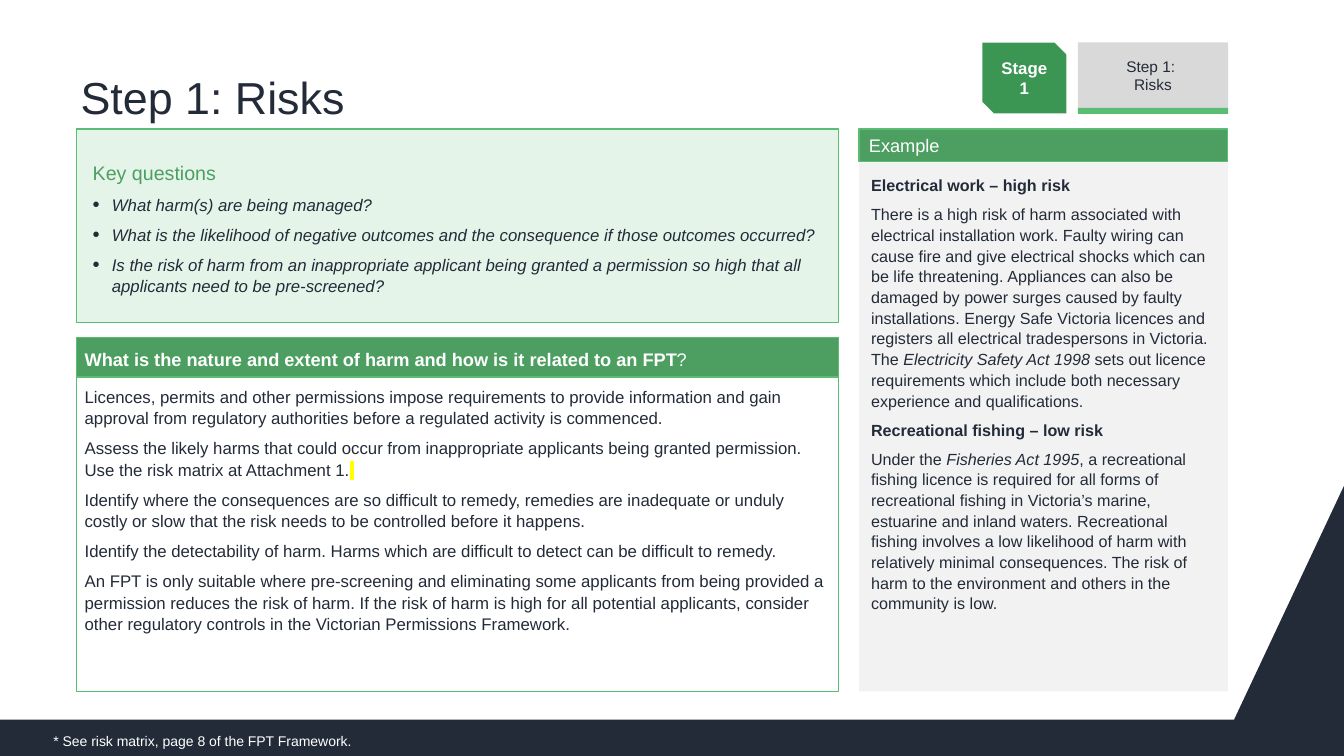
from lxml.etree import SubElement
from pptx import Presentation
from pptx.dml.color import RGBColor as Color
from pptx.enum.shapes import MSO_SHAPE as Shape
from pptx.enum.text import MSO_ANCHOR as Anchor, PP_ALIGN as Align
from pptx.oxml.ns import qn
from pptx.util import Inches, Pt

COLORS = {
    "navy": "232B39", "white": "FFFFFF", "green": "4C9E61",
    "bright": "5BBD74", "stage": "3C9653", "mint": "E5F4E9",
    "pale": "F2F2F2", "gray": "D9D9D9", "yellow": "FFFF00",
}
LEFT, WIDTH = 0.76, 7.56
SIDE, SIDE_WIDTH = 8.52, 3.66
TOP, BOTTOM = 1.28, 6.86
STEP, STEP_WIDTH = 10.69, 1.49

QUESTIONS = [
    "What harm(s) are being managed?",
    "What is the likelihood of negative outcomes and the consequence if those outcomes occurred?",
    "Is the risk of harm from an inappropriate applicant being granted a permission so high that all "
    "applicants need to be pre-screened?",
]
HARM = [
    "Licences, permits and other permissions impose requirements to provide information and gain "
    "approval from regulatory authorities before a regulated activity is commenced.",
    [("Assess the likely harms that could occur from inappropriate applicants being granted permission. "
      "Use the risk matrix at Attachment 1.", ""), (" ", "highlight")],
    "Identify where the consequences are so difficult to remedy, remedies are inadequate or unduly "
    "costly or slow that the risk needs to be controlled before it happens.",
    "Identify the detectability of harm. Harms which are difficult to detect can be difficult to remedy.",
    "An FPT is only suitable where pre-screening and eliminating some applicants from being provided a "
    "permission reduces the risk of harm. If the risk of harm is high for all potential applicants, "
    "consider other regulatory controls in the Victorian Permissions Framework.",
]
EXAMPLES = [
    [("Electrical work – high risk", "bold")],
    [("There is a high risk of harm associated with electrical installation work. Faulty wiring can "
      "cause fire and give electrical shocks which can be life threatening. Appliances can also be "
      "damaged by power surges caused by faulty installations. Energy Safe Victoria licences and "
      "registers all electrical tradespersons in Victoria. The ", ""),
     ("Electricity Safety Act 1998", "italic"),
     (" sets out licence requirements which include both necessary experience and qualifications.", "")],
    [("Recreational fishing – low risk", "bold")],
    [("Under the ", ""), ("Fisheries Act 1995", "italic"),
     (", a recreational fishing licence is required for all forms of recreational fishing in "
      "Victoria’s marine, estuarine and inland waters. Recreational fishing involves a low likelihood "
      "of harm with relatively minimal consequences. The risk of harm to the environment and others "
      "in the community is low.", "")],
]


class SlideBuilder:
    font = "Arial"

    def __init__(self, page):
        self.page = page

    def paint(self, shape, fill, line=None, weight=1):
        shape.shadow.inherit = False
        shape.fill.solid()
        shape.fill.fore_color.rgb = Color.from_string(COLORS[fill])
        if line:
            shape.line.color.rgb = Color.from_string(COLORS[line])
            shape.line.width = Pt(weight)
        else:
            shape.line.fill.background()
        return shape

    def box(self, place, fill, line=None, weight=1, kind=Shape.RECTANGLE):
        shape = self.page.shapes.add_shape(kind, *map(Inches, place))
        return self.paint(shape, fill, line, weight)

    def outline(self, points, fill):
        start, *rest = [(Inches(x), Inches(y)) for x, y in points]
        builder = self.page.shapes.build_freeform(*start)
        builder.add_line_segments(rest, close=True)
        return self.paint(builder.convert_to_shape(), fill)

    def text_box(self, place):
        return self.page.shapes.add_textbox(*map(Inches, place))

    def frame(self, shape, anchor=Anchor.TOP, insets=(0.1, 0.05, 0.1, 0.05)):
        frame = shape.text_frame
        frame.word_wrap = True
        frame.vertical_anchor = anchor
        (frame.margin_left, frame.margin_top,
         frame.margin_right, frame.margin_bottom) = map(Inches, insets)
        return frame

    def bullet(self, para):
        props = para._p.get_or_add_pPr()
        props.set("marL", str(Inches(0.19)))
        props.set("indent", str(-Inches(0.19)))
        SubElement(props, qn("a:buSzPct"), val="120000")
        SubElement(props, qn("a:buFont"), typeface=self.font)
        SubElement(props, qn("a:buChar"), char="•")

    def span(self, para, text, style):
        span = para.add_run()
        span.text = text
        if style == "bold":
            span.font.bold = True
        elif style == "italic":
            span.font.italic = True
        elif style == "highlight":
            mark = SubElement(span._r.get_or_add_rPr(), qn("a:highlight"))
            SubElement(mark, qn("a:srgbClr"), val=COLORS["yellow"])

    def paragraph(self, frame, content, size, color="navy", align=Align.LEFT,
                  spacing=None, after=0, italic=None, bullet=False):
        first = frame.paragraphs[0]
        para = frame.add_paragraph() if first.text else first
        if bullet:
            self.bullet(para)
        if isinstance(content, str):
            para.text = content
        else:
            for text, style in content:
                self.span(para, text, style)
        para.alignment = align
        para.line_spacing = spacing
        para.space_after = Pt(after)
        para.font.name = self.font
        para.font.size = Pt(size)
        para.font.italic = italic
        para.font.color.rgb = Color.from_string(COLORS[color])

    def body(self, frame, contents, size, **style):
        for content in contents:
            self.paragraph(frame, content, size, spacing=1.07, after=6, **style)


def main():
    deck = Presentation()
    deck.slide_width, deck.slide_height = Inches(13.33), Inches(7.5)
    slide = SlideBuilder(deck.slides.add_slide(deck.slide_layouts[6]))

    slide.outline([(12.24, 7.14), (0, 7.14), (0, 7.5), (13.33, 7.5), (13.33, 4.82)], "navy")

    examples = slide.box((SIDE, 1.61, SIDE_WIDTH, BOTTOM - 1.61), "pale")
    slide.body(slide.frame(examples, insets=(0.12,) * 4), EXAMPLES, 11.5)

    harm_header = slide.box((LEFT, 3.35, WIDTH, 0.42), "green", "bright")
    slide.paragraph(slide.frame(harm_header, Anchor.MIDDLE, (0.08, 0.08, 0.08, 0.04)),
                    [("What is the nature and extent of harm and how is it related to an FPT", "bold"),
                     ("?", "")], 13, "white", spacing=0.9)

    example_header = slide.box((SIDE, TOP, SIDE_WIDTH, 0.32), "green", "bright", 0.75)
    slide.paragraph(slide.frame(example_header, Anchor.MIDDLE), "Example", 13, "white")

    harm = slide.box((LEFT, 3.74, WIDTH, BOTTOM - 3.74), "white", "bright")
    slide.body(slide.frame(harm, insets=(0.08,) * 4), HARM, 12)

    footnote = slide.text_box((0.43, 7.22, 5.39, 0.27))
    slide.paragraph(slide.frame(footnote), "* See risk matrix, page 8 of the FPT Framework.", 10, "white")

    stage = slide.box((9.73, 0.41, 0.86, 0.73), "stage", "white", 2, Shape.SNIP_2_DIAG_RECTANGLE)
    slide.paragraph(slide.frame(stage, Anchor.MIDDLE), [("Stage 1", "bold")], 12, "white", Align.CENTER)

    step = slide.box((STEP, 0.42, STEP_WIDTH, 0.65), "gray")
    slide.paragraph(slide.frame(step, Anchor.MIDDLE), "Step 1: \vRisks", 11, align=Align.CENTER)
    slide.box((STEP, 1.07, STEP_WIDTH, 0.06), "bright")

    key_box = slide.box((LEFT, TOP, WIDTH, 1.92), "mint", "bright")
    key_frame = slide.frame(key_box, Anchor.MIDDLE, (0.16, 0.12, 0.16, 0.08))
    slide.body(key_frame, ["Key questions"], 14, color="green")
    slide.body(key_frame, QUESTIONS, 12, italic=True, bullet=True)

    title = slide.text_box((LEFT, 0.15, 11.43, 1.13))
    slide.paragraph(slide.frame(title, Anchor.BOTTOM, (0.04, 0.05, 0.04, 0.05)),
                    "Step 1: Risks", 32, spacing=0.9)

    deck.save("out.pptx")


if __name__ == "__main__":
    main()
